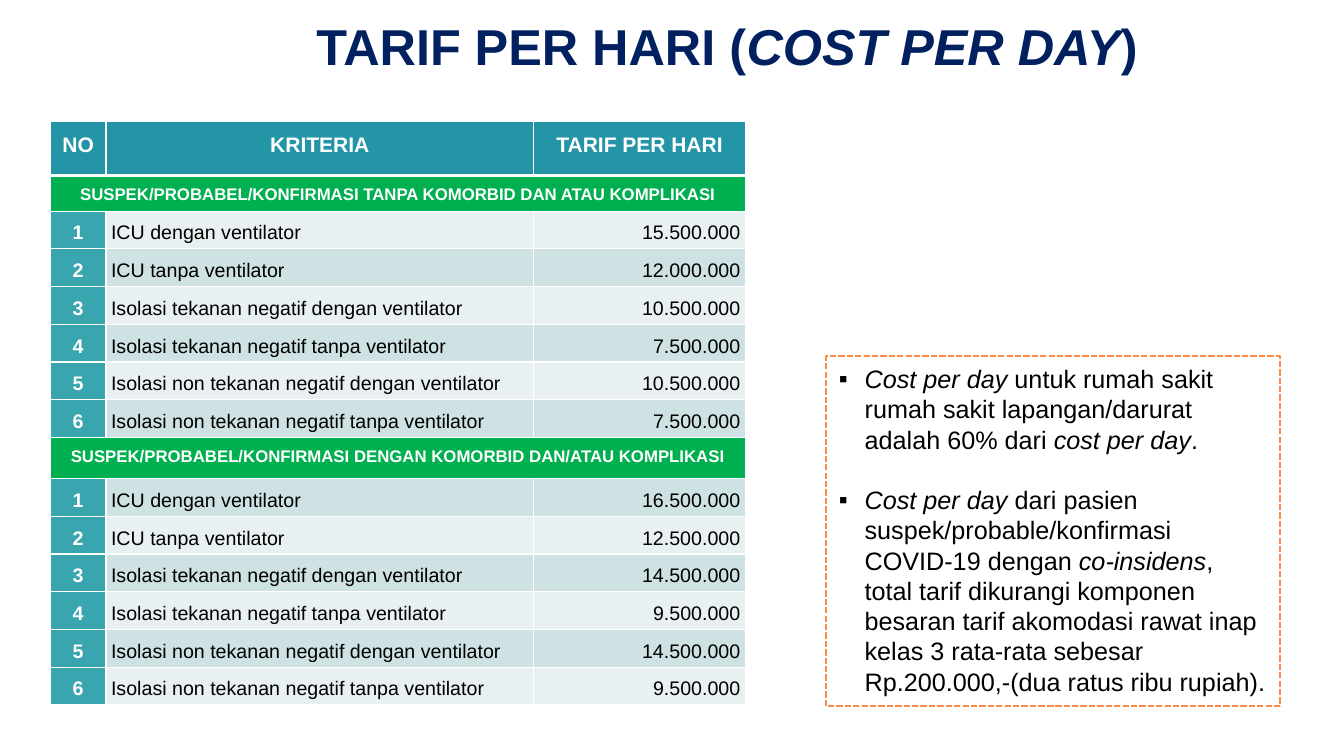
from dataclasses import dataclass

from lxml.etree import SubElement
from pptx import Presentation
from pptx.dml.color import RGBColor
from pptx.enum.dml import MSO_LINE
from pptx.enum.text import MSO_ANCHOR, MSO_AUTO_SIZE, PP_ALIGN
from pptx.oxml.ns import qn
from pptx.util import Cm, Pt

# Content: text parts are (text, italic)
TITLE = [("TARIF PER HARI (", False), ("COST PER DAY", True), (")", False)]
HEADINGS = ("NO", "KRITERIA", "TARIF PER HARI")
CRITERIA = (
    "ICU dengan ventilator",
    "ICU tanpa ventilator",
    "Isolasi tekanan negatif dengan ventilator",
    "Isolasi tekanan negatif tanpa ventilator",
    "Isolasi non tekanan negatif dengan ventilator",
    "Isolasi non tekanan negatif tanpa ventilator",
)
TARIFFS = {
    "SUSPEK/PROBABEL/KONFIRMASI TANPA KOMORBID DAN ATAU KOMPLIKASI": (
        "15.500.000", "12.000.000", "10.500.000", "7.500.000", "10.500.000", "7.500.000"),
    "SUSPEK/PROBABEL/KONFIRMASI DENGAN KOMORBID DAN/ATAU KOMPLIKASI": (
        "16.500.000", "12.500.000", "14.500.000", "9.500.000", "14.500.000", "9.500.000"),
}
NOTES = [
    [("Cost per day", True),
     (" untuk rumah sakit rumah sakit lapangan/darurat adalah 60% dari ", False),
     ("cost per day", True), (".", False)],
    [("Cost per day ", True),
     ("dari pasien suspek/probable/konfirmasi COVID-19 dengan", False),
     (" co-insidens", True),
     (", total tarif dikurangi komponen besaran tarif akomodasi rawat inap kelas 3 "
      "rata-rata sebesar Rp.200.000,-(dua ratus ribu rupiah).", False)],
]


@dataclass(frozen=True)
class Theme:
    font: str = "Arial"
    navy: str = "002060"
    white: str = "FFFFFF"
    black: str = "000000"
    heading: str = "2395A6"
    section: str = "00B050"
    number: str = "39A5AE"
    bands: tuple = ("E8F0F2", "CEE1E3")
    orange: str = "FE8B44"
    title_size: int = 36
    heading_size: int = 15
    section_size: int = 12
    row_size: int = 14
    note_size: int = 18


THEME = Theme()

# Layout, in cm
TITLE_BOX = (7.07, 0.36, 22.5, 1.75)
NOTES_BOX = (20.82, 8.98, 11.43, 8.82)
TABLE_LEFT, TABLE_TOP = 1.27, 3.07
COLUMN_WIDTHS = (1.4, 10.78, 5.34)
HEADING_HEIGHT, ROW_HEIGHT = 1.35, 0.95
SECTION_HEIGHTS = (0.9, 1.04)
BULLET_INDENT = 0.65


def place(placeholder, box):
    placeholder.left, placeholder.top, placeholder.width, placeholder.height = map(Cm, box)
    frame = placeholder.text_frame
    frame.word_wrap = True
    frame.auto_size = MSO_AUTO_SIZE.NONE
    return frame


def style(run, size, color, bold=False, italic=False):
    run.font.name = THEME.font
    run.font.size = Pt(size)
    run.font.bold = bold
    run.font.italic = italic
    run.font.color.rgb = RGBColor.from_string(color)


def write_parts(paragraph, parts, size, color, bold=False):
    for text, italic in parts:
        run = paragraph.add_run()
        run.text = text
        style(run, size, color, bold, italic)


def add_bullet(paragraph):
    properties = paragraph._p.get_or_add_pPr()
    properties.set("marL", str(Cm(BULLET_INDENT)))
    properties.set("indent", str(-Cm(BULLET_INDENT)))
    SubElement(properties, qn("a:buFont")).set("typeface", THEME.font)
    SubElement(properties, qn("a:buChar")).set("char", "▪")


def add_borders(cell, top=1, bottom=1):
    properties = cell._tc.get_or_add_tcPr()
    for side, width in (("L", 1), ("R", 1), ("T", top), ("B", bottom)):
        border = SubElement(properties, qn(f"a:ln{side}"), w=str(Pt(width)))
        fill = SubElement(border, qn("a:solidFill"))
        SubElement(fill, qn("a:srgbClr")).set("val", THEME.white)


def fill_cell(cell, text, fill, size, color=THEME.white, bold=True, align=PP_ALIGN.CENTER):
    cell.fill.solid()
    cell.fill.fore_color.rgb = RGBColor.from_string(fill)
    cell.margin_left = cell.margin_right = Cm(0.13)
    cell.margin_top = cell.margin_bottom = 0
    cell.vertical_anchor = MSO_ANCHOR.TOP
    cell.text_frame.text = text
    paragraph = cell.text_frame.paragraphs[0]
    paragraph.alignment = align
    paragraph.line_spacing = 1.5
    style(paragraph.runs[0], size, color, bold)


def add_tariff_table(slide):
    heights = [HEADING_HEIGHT]
    for section_height in SECTION_HEIGHTS:
        heights += [section_height] + [ROW_HEIGHT] * len(CRITERIA)
    table = slide.shapes.add_table(
        len(heights), len(HEADINGS), Cm(TABLE_LEFT), Cm(TABLE_TOP),
        Cm(sum(COLUMN_WIDTHS)), Cm(sum(heights))).table
    table.first_row = table.horz_banding = False
    for column, width in zip(table.columns, COLUMN_WIDTHS):
        column.width = Cm(width)
    for index, (row, height) in enumerate(zip(table.rows, heights)):
        row.height = Cm(height)
        for cell in row.cells:
            add_borders(cell, top=3 if index == 1 else 1, bottom=3 if index == 0 else 1)

    for column, heading in enumerate(HEADINGS):
        fill_cell(table.cell(0, column), heading, THEME.heading, THEME.heading_size)
    row = 1
    for section, tariffs in TARIFFS.items():
        table.cell(row, 0).merge(table.cell(row, len(HEADINGS) - 1))
        fill_cell(table.cell(row, 0), section, THEME.section, THEME.section_size)
        row += 1
        for number, (criterion, tariff) in enumerate(zip(CRITERIA, tariffs), 1):
            band = THEME.bands[row % 2]
            fill_cell(table.cell(row, 0), str(number), THEME.number, THEME.row_size)
            fill_cell(table.cell(row, 1), criterion, band, THEME.row_size,
                      THEME.black, False, PP_ALIGN.LEFT)
            fill_cell(table.cell(row, 2), tariff, band, THEME.row_size,
                      THEME.black, False, PP_ALIGN.RIGHT)
            row += 1


def add_notes_box(notes_box):
    frame = place(notes_box, NOTES_BOX)
    notes_box.line.color.rgb = RGBColor.from_string(THEME.orange)
    notes_box.line.width = Pt(1.5)
    notes_box.line.dash_style = MSO_LINE.SQUARE_DOT
    frame.margin_left = frame.margin_right = Cm(0.32)
    frame.margin_top = frame.margin_bottom = Cm(0.18)
    frame.vertical_anchor = MSO_ANCHOR.TOP
    for index, note in enumerate(NOTES):
        paragraph = frame.add_paragraph() if index else frame.paragraphs[0]
        paragraph.line_spacing = 1.0
        paragraph.space_before = Pt(21.6 if index else 0)
        add_bullet(paragraph)
        write_parts(paragraph, note, THEME.note_size, THEME.black)


def main():
    presentation = Presentation()
    presentation.slide_width, presentation.slide_height = Cm(33.87), Cm(19.05)
    slide = presentation.slides.add_slide(presentation.slide_layouts[1])

    # Title
    title_frame = place(slide.shapes.title, TITLE_BOX)
    title_frame.vertical_anchor = MSO_ANCHOR.MIDDLE
    heading = title_frame.paragraphs[0]
    heading.alignment = PP_ALIGN.CENTER
    heading.line_spacing = 0.9
    write_parts(heading, TITLE, THEME.title_size, THEME.navy, bold=True)

    # Tariffs and notes
    add_tariff_table(slide)
    add_notes_box(slide.placeholders[1])

    presentation.save("out.pptx")


if __name__ == "__main__":
    main()
